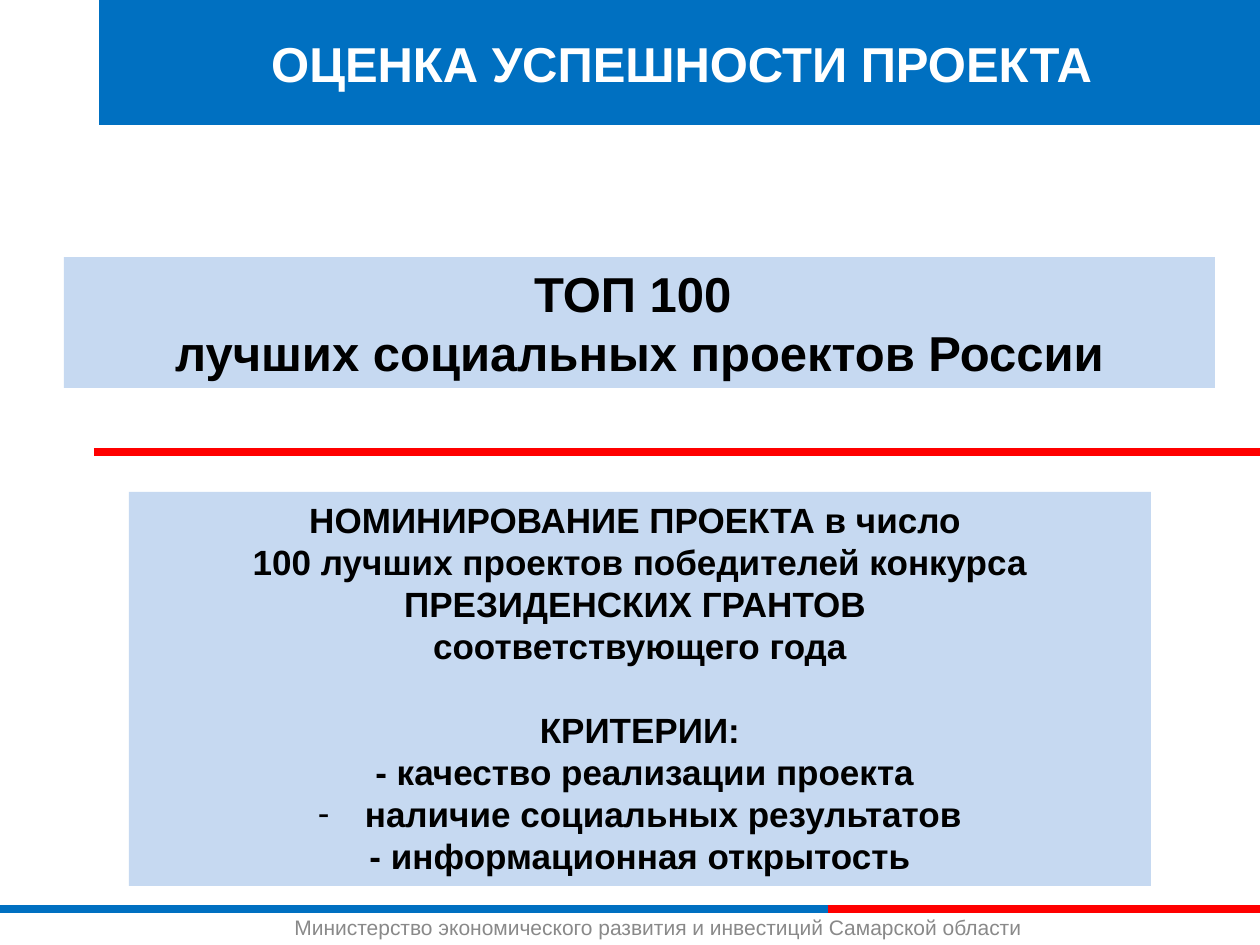
import pptx
import pptx.dml.color
import pptx.enum.shapes
import pptx.enum.text
import pptx.oxml.ns
import pptx.util
from lxml import etree

RGBColor = pptx.dml.color.RGBColor
ALIGN = pptx.enum.text.PP_ALIGN
ANCHOR = pptx.enum.text.MSO_ANCHOR

BLUE = RGBColor(0x00, 0x70, 0xC1)
RED = RGBColor(0xFF, 0x00, 0x00)
PALE_BLUE = RGBColor(0xC6, 0xD9, 0xF1)
GREY = RGBColor(0x89, 0x89, 0x89)
BLACK = RGBColor(0x00, 0x00, 0x00)
WHITE = RGBColor(0xFF, 0xFF, 0xFF)

PX_PER_INCH = 126
FONT = "Arial"


def px(length):
    return pptx.util.Emu(round(length * 914400 / PX_PER_INCH))


class SlideBuilder:
    def __init__(self, slide):
        self.slide = slide

    def set_lines(self, shape, lines, size, color, bold=True,
                  align=ALIGN.CENTER, anchor=ANCHOR.TOP):
        frame = shape.text_frame
        frame.word_wrap = True
        frame.auto_size = pptx.enum.text.MSO_AUTO_SIZE.NONE
        frame.vertical_anchor = anchor
        for index, line in enumerate(lines):
            para = frame.paragraphs[0] if index == 0 else frame.add_paragraph()
            para.text = line
            para.alignment = align
            para.font.name = FONT
            para.font.size = pptx.util.Pt(size)
            para.font.bold = bold
            para.font.color.rgb = color
        return frame.paragraphs

    def title(self, text, left, top, width, height):
        title = self.slide.shapes.title
        title.left, title.top = px(left), px(top)
        title.width, title.height = px(width), px(height)
        title.fill.solid()
        title.fill.fore_color.rgb = BLUE
        self.set_lines(title, [text], 28, WHITE, anchor=ANCHOR.MIDDLE)

    def panel(self, lines, size, left, top, width, height):
        panel = self.slide.shapes.add_shape(
            pptx.enum.shapes.MSO_SHAPE.RECTANGLE,
            px(left), px(top), px(width), px(height))
        panel.shadow.inherit = False
        panel.fill.solid()
        panel.fill.fore_color.rgb = PALE_BLUE
        panel.line.fill.background()
        return self.set_lines(panel, lines, size, BLACK)

    def caption(self, text, left, top, width, height):
        box = self.slide.shapes.add_textbox(
            px(left), px(top), px(width), px(height))
        self.set_lines(box, [text], 12, GREY, bold=False, align=ALIGN.LEFT)

    def rule(self, start, end, y, color):
        rule = self.slide.shapes.add_connector(
            pptx.enum.shapes.MSO_CONNECTOR.STRAIGHT,
            px(start), px(y), px(end), px(y))
        rule.line.color.rgb = color
        rule.line.width = pptx.util.Pt(5)
        etree.SubElement(rule._element.spPr, pptx.oxml.ns.qn("a:effectLst"))

    def dash_bullet(self, para, indent):
        properties = para._p.get_or_add_pPr()
        properties.set("marL", str(px(indent)))
        properties.set("indent", str(-px(indent)))
        # Bullet elements come before the default run properties
        for position, (tag, key, value) in enumerate(
                [("a:buFont", "typeface", FONT), ("a:buChar", "char", "-")]):
            bullet = etree.Element(pptx.oxml.ns.qn(tag))
            bullet.set(key, value)
            properties.insert(position, bullet)


def main():
    deck = pptx.Presentation()
    deck.slide_width, deck.slide_height = px(1260), px(945)
    builder = SlideBuilder(deck.slides.add_slide(deck.slide_layouts[5]))

    # Footer and divider
    builder.rule(0, 828, 909, BLUE)
    builder.caption("Министерство экономического развития и инвестиций "
                    "Самарской области", 282, 908, 824, 37)
    builder.rule(828, 1260, 909, RED)
    builder.rule(94, 1260, 452, RED)

    # Title band
    builder.title("ОЦЕНКА УСПЕШНОСТИ ПРОЕКТА", 99, 0, 1165, 125)

    # Nomination and criteria
    paras = builder.panel([
        "НОМИНИРОВАНИЕ ПРОЕКТА в число ",
        "100 лучших проектов победителей конкурса ПРЕЗИДЕНСКИХ ГРАНТОВ ",
        "соответствующего года",
        "КРИТЕРИИ:",
        " - качество реализации проекта",
        "наличие социальных результатов",
        "- информационная открытость",
    ], 20, 129, 492, 1022, 394)
    paras[3].space_before = pptx.util.Pt(24)
    builder.dash_bullet(paras[5], 47)

    # Headline
    builder.panel(["ТОП 100 ", "лучших социальных проектов России"],
                  28, 64, 257, 1151, 131)

    deck.save("out.pptx")


if __name__ == "__main__":
    main()
